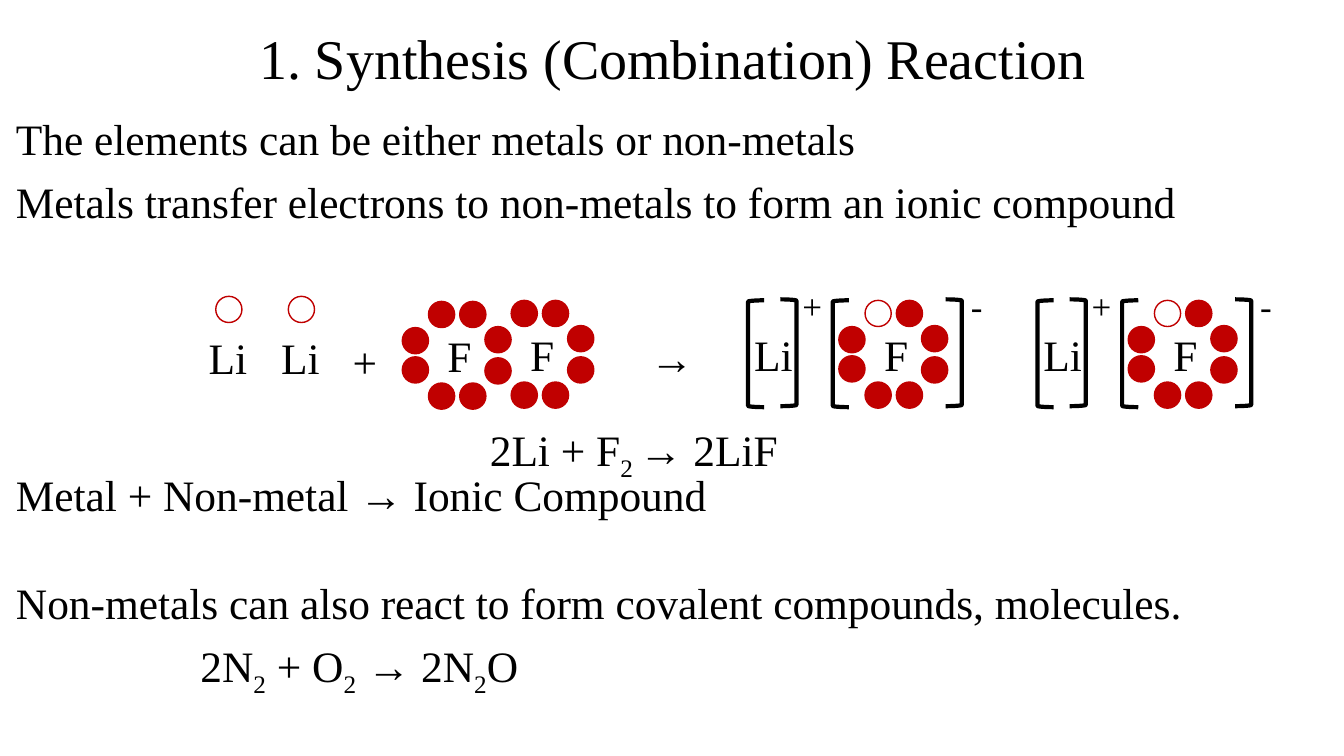
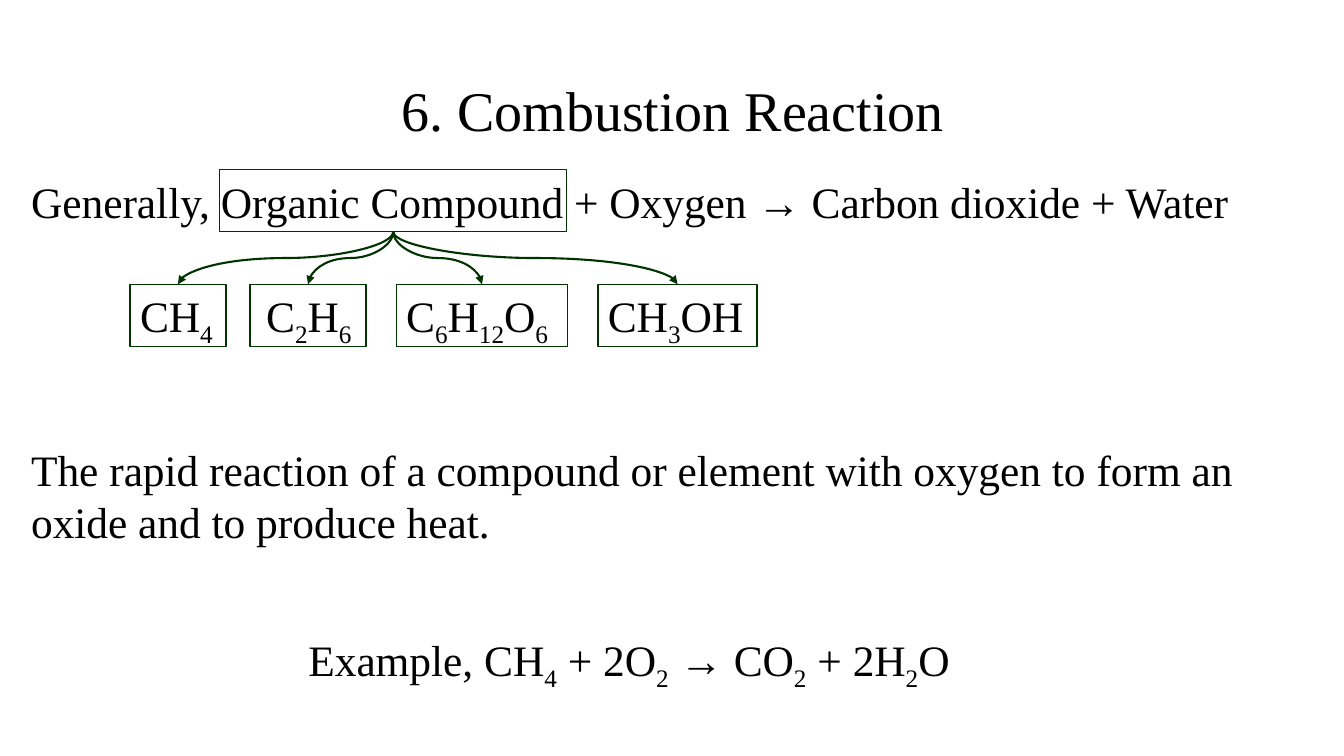
from pptx import Presentation
from pptx import util as u
from pptx.dml.color import RGBColor
from pptx.enum import shapes, text
from pptx.oxml.ns import qn
from lxml import etree

FONT = "Times New Roman"
BLACK, WHITE, RED, GREEN = "000000", "FFFFFF", "C00000", "003300"
TITLE_SIZE, BODY_SIZE, CHARGE_SIZE = 40, 31, 25
LINE_H = 0.62
ELECTRON = 0.26
BRACKET_W, BRACKET_H = 0.16, 1.06

# Electron offsets from the top left corner of the fluorine symbol
F_TOP = [(-0.09, -0.23), (0.22, -0.23)]
F_BOTTOM = [(-0.09, 0.58), (0.22, 0.58)]
F_LEFT = [(-0.35, 0.03), (-0.35, 0.32)]
F_RIGHT = [(0.47, 0.02), (0.47, 0.33)]


def colour(code):
    return RGBColor.from_string(code)


def box(left, top, width, height):
    return [u.Inches(n) for n in (left, top, width, height)]


# Text: parts between underscores are subscripts
def write(frame, words, size=BODY_SIZE, align=text.PP_ALIGN.LEFT, spacing=1.0):
    paragraph = frame.paragraphs[0]
    paragraph.alignment = align
    paragraph.line_spacing = spacing
    for index, part in enumerate(words.split("_")):
        if not part:
            continue
        run = paragraph.add_run()
        run.text = part
        run.font.name = FONT
        run.font.size = u.Pt(size)
        run.font.color.rgb = colour(BLACK)
        if index % 2:
            run.font._element.set("baseline", "-25000")


def add_title(slide, words, top, height):
    title = slide.shapes.title
    title.left, title.top, title.width, title.height = box(0.92, top, 11.5, height)
    frame = title.text_frame
    frame.word_wrap = True
    frame.auto_size = text.MSO_AUTO_SIZE.NONE
    frame.vertical_anchor = text.MSO_ANCHOR.MIDDLE
    write(frame, words, size=TITLE_SIZE, align=text.PP_ALIGN.CENTER, spacing=0.9)


def add_text(slide, words, left, top, width, height=LINE_H, wrap=False, **style):
    frame = slide.shapes.add_textbox(*box(left, top, width, height)).text_frame
    frame.word_wrap = wrap
    frame.auto_size = text.MSO_AUTO_SIZE.SHAPE_TO_FIT_TEXT
    write(frame, words, **style)


# Shapes
def add_shape(slide, kind, place, line, fill=None, weight=1):
    shape = slide.shapes.add_shape(kind, *box(*place))
    shape.shadow.inherit = False
    if fill:
        shape.fill.solid()
        shape.fill.fore_color.rgb = colour(fill)
    else:
        shape.fill.background()
    shape.line.color.rgb = colour(line)
    shape.line.width = u.Pt(weight)
    return shape


def add_electron(slide, left, top, fill=RED):
    add_shape(slide, shapes.MSO_SHAPE.OVAL, (left, top, ELECTRON, ELECTRON), RED, fill)


def add_lithium(slide, left, top):
    add_text(slide, "Li", left, top, 0.59)
    add_electron(slide, left + 0.17, top - 0.3, WHITE)


def add_fluorine(slide, left, top, electrons, gained=None):
    for dx, dy in electrons:
        fill = WHITE if (dx, dy) == gained else RED
        add_electron(slide, left + dx, top + dy, fill)
    add_text(slide, "F", left, top, 0.44)


def add_brackets(slide, left, right, top, charge, charge_w):
    sides = ((shapes.MSO_SHAPE.LEFT_BRACKET, left, top + 0.01),
             (shapes.MSO_SHAPE.RIGHT_BRACKET, right, top))
    for kind, x, y in sides:
        add_shape(slide, kind, (x, y, BRACKET_W, BRACKET_H), BLACK, weight=3)
    add_text(slide, charge, right + 0.12 + (0.03 if charge == "-" else 0),
             top - 0.2, charge_w, 0.52, size=CHARGE_SIZE)


def add_ion_pair(slide, left, top):
    add_text(slide, "Li", left, top, 0.59)
    add_brackets(slide, left + 0.04, left + 0.36, top - 0.24, "+", 0.4)
    add_fluorine(slide, left + 1.29, top,
                 F_TOP + F_BOTTOM + F_LEFT + F_RIGHT, gained=F_TOP[0])
    add_brackets(slide, left + 0.88, left + 2.0, top - 0.24, "-", 0.32)


def add_formula(slide, words, left, top, width, inset):
    frame = add_shape(slide, shapes.MSO_SHAPE.RECTANGLE,
                      (left, top, width, LINE_H), GREEN, WHITE).text_frame
    frame.word_wrap = True
    frame.vertical_anchor = text.MSO_ANCHOR.TOP
    frame.margin_left, frame.margin_right = u.Inches(inset), 0
    write(frame, words)


def add_curve(slide, x1, y1, x2, y2):
    """Curved arrow that leaves and arrives vertically: a quarter-turned connector."""
    mid_x, mid_y = (x1 + x2) / 2, (y1 + y2) / 2
    half_w = (y2 - y1) / 2
    half_h = abs(x2 - x1) / 2
    to_right = x2 > x1
    if to_right:
        half_w = -half_w
    curve = slide.shapes.add_connector(
        shapes.MSO_CONNECTOR.CURVE,
        *box(mid_x - half_w, mid_y - half_h, mid_x + half_w, mid_y + half_h))
    curve.line.color.rgb = colour(GREEN)
    curve.line.width = u.Pt(1.5)
    properties = curve._element.spPr
    properties.find(qn("a:xfrm")).set("rot", str((270 if to_right else 90) * 60000))
    line = properties.find(qn("a:ln"))
    etree.SubElement(line, qn("a:tailEnd"), type="triangle")
    etree.SubElement(properties, qn("a:effectLst"))


# Slides
def build_synthesis(slide):
    add_title(slide, "1. Synthesis (Combination) Reaction", 0.14, 0.93)
    statements = [
        ("The elements can be either metals or non-metals", 1.06, 8.62),
        ("Metals transfer electrons to non-metals to form an ionic compound", 1.69, 11.84),
        ("Metal + Non-metal → Ionic Compound", 4.59, 7.13),
        ("Non-metals can also react to form covalent compounds, molecules.", 5.67, 11.89),
    ]
    for words, top, width in statements:
        add_text(slide, words, 0.06, top, width)
    add_text(slide, "2N_2_ + O_2_ → 2N_2_O", 1.89, 6.29, 3.44)

    # Reactants: two lithium atoms and a fluorine molecule with a shared pair
    for left in (1.97, 2.69):
        add_lithium(slide, left, 3.24)
    add_text(slide, "+", 3.4, 3.27, 0.45)
    add_fluorine(slide, 4.34, 3.22, F_TOP + F_BOTTOM + F_LEFT + F_RIGHT)
    add_fluorine(slide, 5.16, 3.21, F_TOP + F_BOTTOM + F_RIGHT)
    add_text(slide, "→", 6.35, 3.24, 0.64)

    # Products
    for left in (7.38, 10.25):
        add_ion_pair(slide, left, 3.21)
    add_text(slide, "2Li + F_2 _→ 2LiF", 4.76, 4.15, 3.12)


def build_combustion(slide):
    add_title(slide, "6. Combustion Reaction", 0.4, 1.45)

    # Word equation with its framed term
    frame_left, frame_top, frame_w = 2.18, 1.68, 3.44
    add_shape(slide, shapes.MSO_SHAPE.RECTANGLE,
              (frame_left, frame_top, frame_w, LINE_H), GREEN, WHITE)
    add_text(slide, "Generally, Organic Compound + Oxygen → Carbon dioxide + Water",
             0.21, 1.69, 12.21)

    # Example compounds
    formula_top = 2.82
    formulas = [
        ("CH_4_", 1.29, 0.95, 0.1),
        ("C_2_H_6_", 2.48, 1.15, 0.16),
        ("C_6_H_12_O_6_", 3.93, 1.7, 0.1),
        ("CH_3_OH", 5.93, 1.58, 0.1),
    ]
    for words, left, width, inset in formulas:
        add_formula(slide, words, left, formula_top, width, inset)
        add_curve(slide, frame_left + frame_w / 2, frame_top + LINE_H,
                  left + width / 2, formula_top)

    # Definition and example
    add_text(slide, "The rapid reaction of a compound or element with oxygen "
             "to form an oxide and to produce heat.", 0.21, 4.35, 12.21, 1.14, wrap=True)
    add_text(slide, "Example, CH_4_ + 2O_2_ → CO_2_ + 2H_2_O", 2.96, 6.23, 6.71)


def main():
    deck = Presentation()
    deck.slide_width, deck.slide_height = u.Inches(13.33), u.Inches(7.5)
    title_only = deck.slide_layouts[5]
    for build in (build_synthesis, build_combustion):
        build(deck.slides.add_slide(title_only))
    deck.save("out.pptx")


if __name__ == "__main__":
    main()
